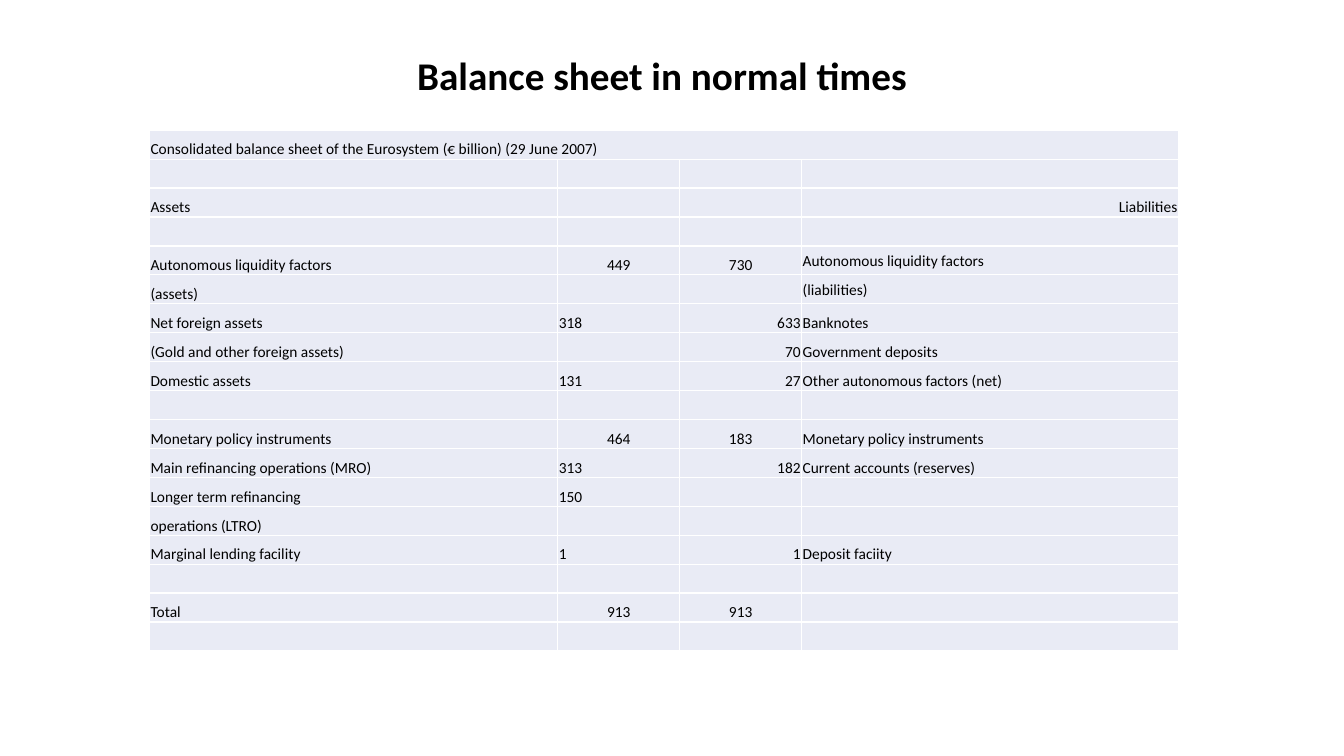
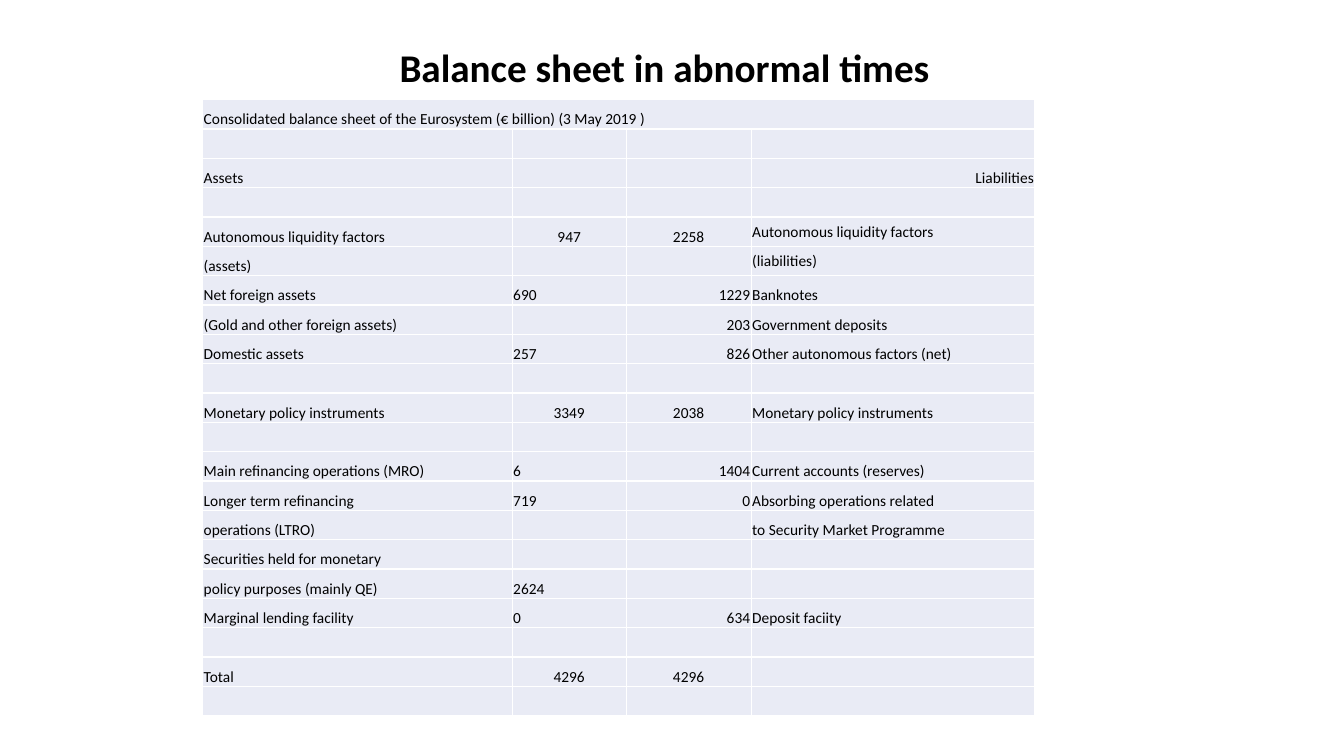
"""Build two slides comparing consolidated balance sheets."""
import dataclasses

import pptx
import pptx.dml.color
import pptx.enum.text
import pptx.util

Pt = pptx.util.Pt
RGB = pptx.dml.color.RGBColor
ALIGN = pptx.enum.text.PP_ALIGN
ANCHOR = pptx.enum.text.MSO_ANCHOR


@dataclasses.dataclass(frozen=True)
class Theme:
    """Colours, type sizes and spacing shared by the slides."""

    font: str = "Calibri"
    ink: RGB = RGB(0x00, 0x00, 0x00)
    cell: RGB = RGB(0xE9, 0xEB, 0xF5)
    title_size: float = 28
    table_size: float = 11
    title_spacing: float = 0.9
    inset: float = 0.72


THEME = Theme()
TITLE_ONLY = 5
BLANK = ("", "", "", "")
LIQUIDITY = "Autonomous liquidity factors"
POLICY = "Monetary policy instruments"
SUBTOTALS = {LIQUIDITY, POLICY, "Total"}
RAISED = {LIQUIDITY, "(liabilities)"}
COLUMN_ALIGN = (ALIGN.LEFT, ALIGN.LEFT, ALIGN.RIGHT, ALIGN.LEFT)


def balance_rows(date, liquidity, foreign, government, domestic, policy, total):
    """Return the rows of one balance sheet; pairs are (assets, liabilities)."""
    return [
        (f"Consolidated balance sheet of the Eurosystem (€ billion) ({date})", "", "", ""),
        BLANK,
        ("Assets", "", "", "Liabilities"),
        BLANK,
        (LIQUIDITY, *liquidity, LIQUIDITY),
        ("(assets)", "", "", "(liabilities)"),
        ("Net foreign assets", *foreign, "Banknotes"),
        ("(Gold and other foreign assets)", "", government, "Government deposits"),
        ("Domestic assets", *domestic, "Other autonomous factors (net)"),
        BLANK,
        *policy,
        BLANK,
        ("Total", *total, ""),
        BLANK,
    ]


NORMAL = balance_rows(
    "29 June 2007", ("449", "730"), ("318", "633"), "70", ("131", "27"),
    [
        (POLICY, "464", "183", POLICY),
        ("Main refinancing operations (MRO)", "313", "182", "Current accounts (reserves)"),
        ("Longer term refinancing", "150", "", ""),
        ("operations (LTRO)", "", "", ""),
        ("Marginal lending facility", "1", "1", "Deposit faciity"),
    ],
    ("913", "913"),
)
ABNORMAL = balance_rows(
    "3 May 2019 ", ("947", "2258"), ("690", "1229"), "203", ("257", "826"),
    [
        (POLICY, "3349", "2038", POLICY),
        BLANK,
        ("Main refinancing operations (MRO)", "6", "1404", "Current accounts (reserves)"),
        ("Longer term refinancing", "719", "0", "Absorbing operations related"),
        ("operations (LTRO)", "", "", "to Security Market Programme"),
        ("Securities held for monetary", "", "", ""),
        ("policy purposes (mainly QE)", "2624", "", ""),
        ("Marginal lending facility", "0", "634", "Deposit faciity"),
    ],
    ("4296", "4296"),
)


def style_font(font, size, bold=False):
    """Apply the theme font at the given size."""
    font.name = THEME.font
    font.size = Pt(size)
    font.bold = bold
    font.color.rgb = THEME.ink


def add_title(s, text, box):
    """Place the slide title in its box."""
    sp = s.shapes.title
    sp.left, sp.top, sp.width, sp.height = map(Pt, box)
    tf = sp.text_frame
    tf.text = text
    tf.vertical_anchor = ANCHOR.MIDDLE
    p = tf.paragraphs[0]
    p.alignment = ALIGN.CENTER
    p.line_spacing = THEME.title_spacing
    style_font(p.font, THEME.title_size, bold=True)


def cell_alignment(label, text, column):
    """Return the alignment of a cell from its row label and column."""
    if text == "Liabilities":
        return ALIGN.RIGHT
    if label in SUBTOTALS and column in (1, 2):
        return ALIGN.CENTER
    return COLUMN_ALIGN[column]


def fill_cell(cell, label, text, column):
    """Write and format one table cell."""
    cell.fill.solid()
    cell.fill.fore_color.rgb = THEME.cell
    cell.margin_left = cell.margin_right = cell.margin_top = Pt(THEME.inset)
    cell.margin_bottom = 0
    raised = column == 3 and text in RAISED
    cell.vertical_anchor = ANCHOR.MIDDLE if raised else ANCHOR.BOTTOM
    cell.text = text
    p = cell.text_frame.paragraphs[0]
    p.alignment = cell_alignment(label, text, column)
    style_font(p.font, THEME.table_size)
    if not text:
        end = p._p.get_or_add_endParaRPr()
        end.set("sz", str(THEME.table_size * 100))


def add_balance_table(s, rows, box, widths):
    """Place a balance sheet in its box, with columns in the given proportions."""
    left, top, width, height = box
    table = s.shapes.add_table(len(rows), len(widths), *map(Pt, box)).table
    table.first_row = table.horz_banding = False
    for column, share in zip(table.columns, widths):
        column.width = Pt(width * share / sum(widths))
    for i, row in enumerate(rows):
        table.rows[i].height = Pt(height / len(rows))
        for j, text in enumerate(row):
            fill_cell(table.cell(i, j), row[0], text, j)
    table.cell(0, 0).merge(table.cell(0, len(widths) - 1))


def add_balance_slide(prs, title, title_box, rows, table_box, widths):
    """Add a slide with a title and a balance sheet."""
    s = prs.slides.add_slide(prs.slide_layouts[TITLE_ONLY])
    add_title(s, title, title_box)
    add_balance_table(s, rows, table_box, widths)


def main():
    """Build and save the presentation."""
    prs = pptx.Presentation()
    prs.slide_width, prs.slide_height = Pt(960), Pt(540)
    add_balance_slide(
        prs, "Balance sheet in normal times", (66, 28.8, 813.6, 54),
        NORMAL, (106.8, 93, 735, 372), (291.5, 87.1, 87.1, 269),
    )
    add_balance_slide(
        prs, "Balance sheet in abnormal times", (66, 28.8, 817.2, 42.5),
        ABNORMAL, (144.8, 71.2, 594.5, 440), (221.1, 81.4, 89.3, 202.7),
    )
    prs.save("out.pptx")


if __name__ == "__main__":
    main()
